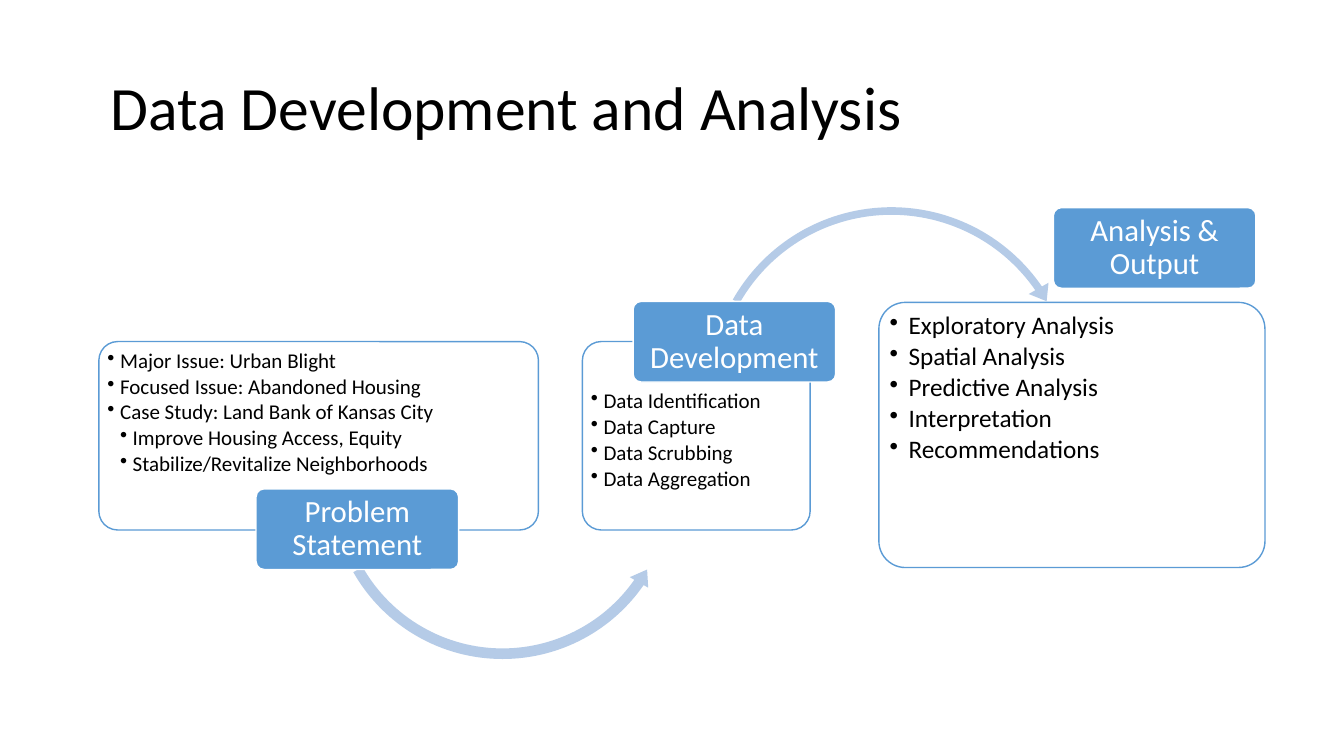
from lxml import etree
from pptx import Presentation
from pptx.dml.color import RGBColor
from pptx.enum.shapes import MSO_SHAPE
from pptx.enum.text import MSO_ANCHOR, PP_ALIGN
from pptx.oxml.ns import qn
from pptx.util import Pt

ROUND = MSO_SHAPE.ROUNDED_RECTANGLE
OVER, UNDER = MSO_SHAPE.CIRCULAR_ARROW, MSO_SHAPE.LEFT_CIRCULAR_ARROW
TOP, MIDDLE = MSO_ANCHOR.TOP, MSO_ANCHOR.MIDDLE
LEFT, CENTER = PP_ALIGN.LEFT, PP_ALIGN.CENTER
COLORS = {"blue": "5B9BD5", "pale": "B5CBE7", "white": "FFFFFF", "black": "000000"}
FONT = "Calibri"
LABEL_SIZE = (144.7, 57.6)


def color(name):
    return RGBColor.from_string(COLORS[name])


class Board:
    def __init__(self, slide):
        self.slide = slide

    def shape(self, kind, at, fill, line=None, adjust=()):
        item = self.slide.shapes.add_shape(kind, *map(Pt, at))
        item.shadow.inherit = False
        item.fill.solid()
        item.fill.fore_color.rgb = color(fill)
        if line:
            item.line.color.rgb = color(line)
            item.line.width = Pt(1)
        else:
            item.line.fill.background()
        for i, value in enumerate(adjust):
            item.adjustments[i] = value
        return item

    def text(self, item, rows, size, ink, align, anchor, inset):
        """Fill the item with rows; inset is left, top, right, bottom."""
        frame = item.text_frame
        frame.word_wrap = True
        frame.vertical_anchor = anchor
        (frame.margin_left, frame.margin_top,
         frame.margin_right, frame.margin_bottom) = map(Pt, inset)
        for i, row in enumerate(rows):
            para = frame.add_paragraph() if i else frame.paragraphs[0]
            para.text = row
            para.alignment = align
            para.line_spacing = 0.9
            para.font.size = Pt(size)
            para.font.name = FONT
            para.font.color.rgb = color(ink)
        return frame.paragraphs

    def title(self, at, text):
        box = self.slide.shapes.add_textbox(*map(Pt, at))
        self.text(box, [text], 44, "black", LEFT, MIDDLE, (7.2, 3.6, 7.2, 3.6))

    def panel(self, at, rows, size, step, drop=0):
        """Outlined box of bullets; rows pair a level with its text."""
        box = self.shape(ROUND, at, "white", "blue", [0.1])
        tint = box.element.spPr.find(qn("a:solidFill")).find(qn("a:srgbClr"))
        etree.SubElement(tint, qn("a:alpha"), val="90000")
        paras = self.text(box, [text for _, text in rows], size, "black",
                          LEFT, TOP, (2.2, 2.2 + drop, 2.2, 2.2))
        for para, (level, _) in zip(paras, rows):
            para.level = level
            para.space_after = Pt(0.15 * size)
            props = para._p.get_or_add_pPr()
            props.set("marL", str(Pt(step * level)))
            props.set("indent", str(-Pt(step)))
            etree.SubElement(props, qn("a:buChar"), char="•")
            # Schema order puts the bullet before the default run style.
            style = props.find(qn("a:defRPr"))
            if style is not None:
                props.append(style)

    def label(self, left, top, text):
        box = self.shape(ROUND, (left, top, *LABEL_SIZE), "blue", "white", [0.1])
        self.text(box, [text], 22, "white", CENTER, MIDDLE, (3.3, 2.2, 3.3, 2.2))

    def arrow(self, kind, left, top, size, adjust):
        self.shape(kind, (left, top, size, size), "pale", adjust=adjust)


def main():
    deck = Presentation()
    deck.slide_width, deck.slide_height = Pt(960), Pt(540)
    board = Board(deck.slides.add_slide(deck.slide_layouts[6]))

    board.panel((70.6, 244, 314, 134.6), [
        (1, "Major Issue: Urban Blight"),
        (1, "Focused Issue: Abandoned Housing"),
        (1, "Case Study: Land Bank of Kansas City"),
        (2, "Improve Housing Access, Equity"),
        (2, "Stabilize/Revitalize Neighborhoods"),
    ], 15, 9)
    board.arrow(UNDER, 232.6, 221.8, 252.7, (0.03, 3.15, 20.91, 90.24, 0.03))
    board.label(182.9, 349.2, "Problem Statement")

    board.panel((416, 244, 162.7, 134.6), [
        (1, "Data Identification"),
        (1, "Data Capture"),
        (1, "Data Scrubbing"),
        (1, "Data Aggregation"),
    ], 15, 9, drop=28.8)
    board.arrow(OVER, 501.1, 142.6, 271.4, (0.02, 2.92, 195.29, 125.72, 0.03))
    board.label(452.2, 215.3, "Data Development")

    board.panel((627.8, 216, 275.8, 189.4), [
        (1, "Exploratory Analysis"),
        (1, "Spatial Analysis"),
        (1, "Predictive Analysis"),
        (1, "Interpretation"),
        (1, "Recommendations"),
    ], 18, 13.5)
    board.label(752.4, 148.3, "Analysis & Output")

    board.title((72, 49, 816, 59.8), "Data Development and Analysis")
    deck.save("out.pptx")


if __name__ == "__main__":
    main()
